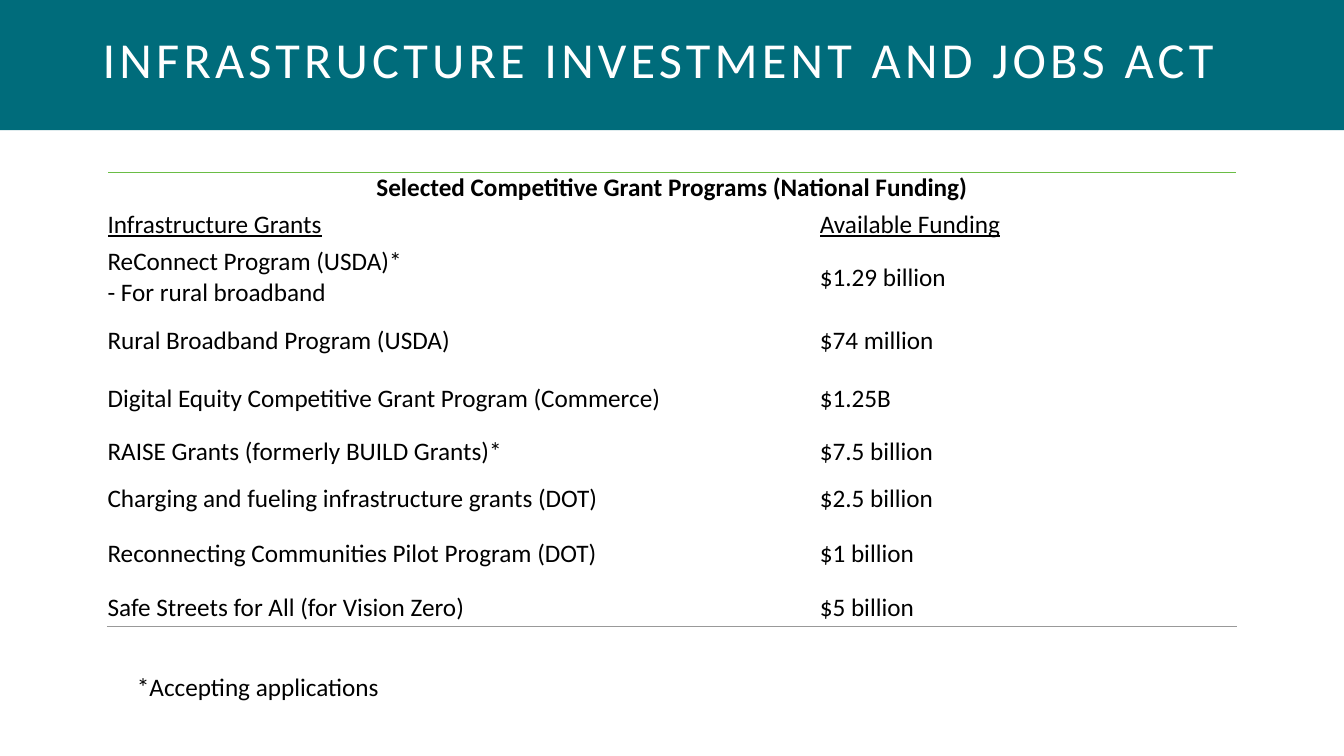
from dataclasses import dataclass

from lxml import etree
from pptx import Presentation
from pptx import util as u
from pptx.dml.color import RGBColor
from pptx.enum import shapes, text
from pptx.oxml import ns

COLORS = {"band": "006C7B", "title": "FFFFFF", "body": "000000",
          "top_rule": "6ABD45", "bottom_rule": "999999"}
FONT = "Calibri"
WIDTH, HEIGHT = u.Inches(13.33), u.Inches(7.5)
COLUMN, ROW = WIDTH / 100, HEIGHT / 100
TABLE_LEFT, TABLE_TOP = 8, 22.8
TABLE_COLUMNS = (53, 31)


@dataclass(frozen=True)
class Area:
    left: float
    top: float
    width: float
    height: float

    def box(self) -> tuple[int, int, int, int]:
        return (round(self.left * COLUMN), round(self.top * ROW),
                round(self.width * COLUMN), round(self.height * ROW))


@dataclass(frozen=True)
class GrantRow:
    height: float
    program: str
    funding: str = ""
    bold: bool = False
    underline: bool = False


GRANT_ROWS = (
    GrantRow(4.13, "Selected Competitive Grant Programs (National Funding)", bold=True),
    GrantRow(5.6, "Infrastructure Grants", "Available Funding", underline=True),
    GrantRow(8.4, "ReConnect Program (USDA)*\n- For rural broadband", "$1.29 billion"),
    GrantRow(8.4, "Rural Broadband Program (USDA)", "$74 million"),
    GrantRow(6.93, "Digital Equity Competitive Grant Program (Commerce)", "$1.25B"),
    GrantRow(6.93, "RAISE Grants (formerly BUILD Grants)*", "$7.5 billion"),
    GrantRow(5.6, "Charging and fueling infrastructure grants (DOT)", "$2.5 billion"),
    GrantRow(9.07, "Reconnecting Communities Pilot Program (DOT)", "$1 billion"),
    GrantRow(5.07, "Safe Streets for All (for Vision Zero)", "$5 billion"),
)


def style_font(paragraph, size: float, color: str) -> None:
    font = paragraph.font
    font.name, font.size = FONT, u.Pt(size)
    font.color.rgb = RGBColor.from_string(COLORS[color])


def add_band(slide, area: Area) -> None:
    shape = slide.shapes.add_shape(shapes.MSO_SHAPE.RECTANGLE, *area.box())
    shape.shadow.inherit = False
    shape.fill.solid()
    shape.fill.fore_color.rgb = RGBColor.from_string(COLORS["band"])
    shape.line.fill.background()


def add_label(slide, area: Area, wording: str, size: float, color: str):
    shape = slide.shapes.add_textbox(*area.box())
    shape.text_frame.word_wrap = True
    paragraph = shape.text_frame.paragraphs[0]
    paragraph.text = wording
    style_font(paragraph, size, color)
    return shape


def add_title(slide, area: Area, wording: str) -> None:
    shape = add_label(slide, area, wording, 36, "title")
    shape.text_frame.vertical_anchor = text.MSO_ANCHOR.MIDDLE
    paragraph = shape.text_frame.paragraphs[0]
    paragraph.line_spacing = 0.9
    paragraph.runs[0].font._element.set("spc", "300")


def add_rule(cell, side: str, color: str) -> None:
    line = etree.Element(ns.qn(f"a:ln{side}"), w=str(u.Pt(1)))
    fill = etree.SubElement(line, ns.qn("a:solidFill"))
    etree.SubElement(fill, ns.qn("a:srgbClr"), val=COLORS[color])
    cell._tc.get_or_add_tcPr().insert(0, line)


def fill_cell(cell, wording: str, row: GrantRow) -> None:
    cell.fill.background()
    cell.margin_left = cell.margin_right = cell.margin_top = cell.margin_bottom = 0
    cell.vertical_anchor = text.MSO_ANCHOR.MIDDLE
    cell.text = wording
    for paragraph in cell.text_frame.paragraphs:
        style_font(paragraph, 18, "body")
        paragraph.font.bold, paragraph.font.underline = row.bold, row.underline


def add_grants(slide) -> None:
    area = Area(TABLE_LEFT, TABLE_TOP, sum(TABLE_COLUMNS),
                sum(row.height for row in GRANT_ROWS))
    table = slide.shapes.add_table(len(GRANT_ROWS), len(TABLE_COLUMNS), *area.box()).table
    table.first_row = table.horz_banding = False
    for column, width in zip(table.columns, TABLE_COLUMNS):
        column.width = round(width * COLUMN)
    for index, row in enumerate(GRANT_ROWS):
        table.rows[index].height = round(row.height * ROW)
        for cell, wording in zip(table.rows[index].cells, (row.program, row.funding)):
            fill_cell(cell, wording, row)
    for column in range(len(TABLE_COLUMNS)):
        add_rule(table.cell(0, column), "T", "top_rule")
        add_rule(table.cell(len(GRANT_ROWS) - 1, column), "B", "bottom_rule")
    heading = table.cell(0, 0)
    heading.merge(table.cell(0, 1))
    heading.text_frame.paragraphs[0].alignment = text.PP_ALIGN.CENTER


def main() -> None:
    presentation = Presentation()
    presentation.slide_width, presentation.slide_height = WIDTH, HEIGHT
    slide = presentation.slides.add_slide(presentation.slide_layouts[6])
    add_band(slide, Area(0, 0, 100, 17.2))
    add_title(slide, Area(6.9, 3.47, 86.25, 9.6), "INFRASTRUCTURE INVESTMENT AND JOBS ACT")
    add_grants(slide)
    footnote = add_label(slide, Area(9.45, 88.13, 46.05, 5.33),
                         "*Accepting applications", 18, "body")
    footnote.text_frame.auto_size = text.MSO_AUTO_SIZE.SHAPE_TO_FIT_TEXT
    presentation.save("out.pptx")


if __name__ == "__main__":
    main()
